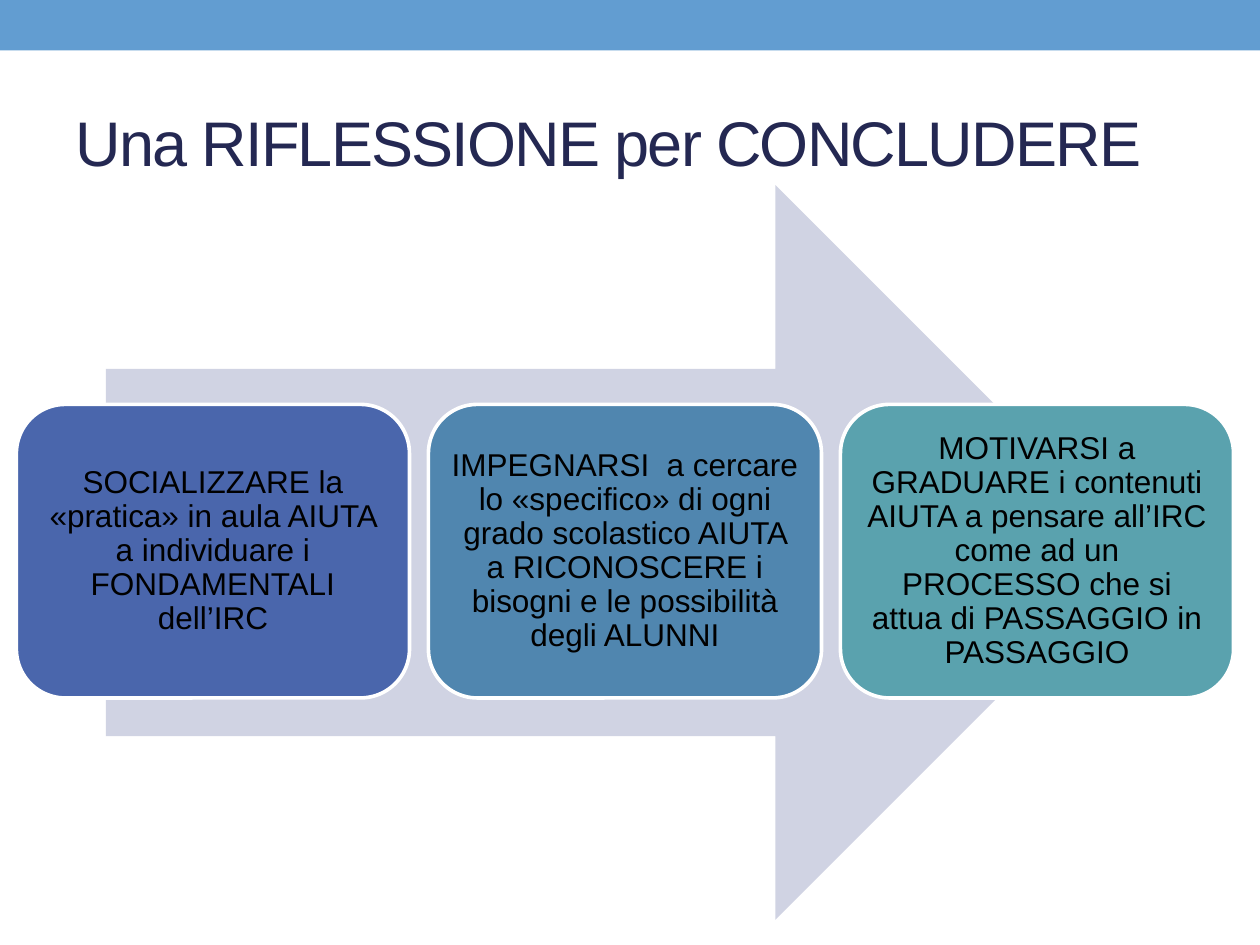
from pptx import Presentation
from pptx.dml.color import RGBColor
from pptx.enum.shapes import MSO_SHAPE
from pptx.enum.text import MSO_ANCHOR, PP_ALIGN
from pptx.util import Inches, Pt

RECTANGLE = MSO_SHAPE.RECTANGLE
RIGHT_ARROW = MSO_SHAPE.RIGHT_ARROW
ROUNDED = MSO_SHAPE.ROUNDED_RECTANGLE
MIDDLE = MSO_ANCHOR.MIDDLE
LEFT, CENTER = PP_ALIGN.LEFT, PP_ALIGN.CENTER

WHITE = RGBColor(0xFF, 0xFF, 0xFF)
BLACK = RGBColor(0x00, 0x00, 0x00)
NAVY = RGBColor(0x24, 0x28, 0x52)
SKY = RGBColor(0x62, 0x9D, 0xD1)
LAVENDER = RGBColor(0xD0, 0xD3, 0xE3)
BLUE = RGBColor(0x4A, 0x66, 0xAC)
STEEL = RGBColor(0x50, 0x86, 0xAF)
TEAL = RGBColor(0x5A, 0xA2, 0xAE)

TITLE = "Una RIFLESSIONE per CONCLUDERE"
STEPS = [
    (BLUE, "SOCIALIZZARE la «pratica» in aula AIUTA a individuare i "
           "FONDAMENTALI dell’IRC"),
    (STEEL, "IMPEGNARSI  a cercare lo «specifico» di ogni grado scolastico "
            "AIUTA a RICONOSCERE i bisogni e le possibilità degli ALUNNI"),
    (TEAL, "MOTIVARSI a GRADUARE i contenuti AIUTA a pensare all’IRC come "
           "ad un PROCESSO che si attua di PASSAGGIO in PASSAGGIO"),
]
STEP_LEFT, STEP_TOP, STEP_WIDTH, STEP_HEIGHT = 0.13, 3.21, 3.12, 2.33
STEP_PITCH = 3.27


def apply(target, values):
    for name, value in values.items():
        setattr(target, name, value)


class SlideBuilder:
    font_name = "Arial"
    title_size = Pt(36)
    step_size = Pt(18)
    step_margin = Inches(0.07)
    outline = Pt(2.08)

    def __init__(self, slide):
        self.slide = slide

    def add_text(self, frame, text, size, color, paragraph_format):
        apply(frame, {"word_wrap": True, "vertical_anchor": MIDDLE})
        para = frame.paragraphs[0]
        apply(para, paragraph_format)
        span = para.add_run()
        span.text = text
        apply(span.font, {"name": self.font_name, "size": size})
        span.font.color.rgb = color
        return span

    def title(self, text, left, top, width, height):
        box = self.slide.shapes.title
        apply(box, {"left": Inches(left), "top": Inches(top),
                    "width": Inches(width), "height": Inches(height)})
        span = self.add_text(box.text_frame, text, self.title_size, NAVY,
                             {"alignment": LEFT})
        # Letter spacing in hundredths of a point
        span._r.get_or_add_rPr().set("spc", "-100")

    def shape(self, kind, left, top, width, height, fill):
        box = self.slide.shapes.add_shape(
            kind, Inches(left), Inches(top), Inches(width), Inches(height))
        box.shadow.inherit = False
        box.fill.solid()
        box.fill.fore_color.rgb = fill
        box.line.fill.background()
        return box

    def step(self, left, fill, text):
        box = self.shape(ROUNDED, left, STEP_TOP, STEP_WIDTH, STEP_HEIGHT, fill)
        box.line.color.rgb = WHITE
        box.line.width = self.outline
        frame = box.text_frame
        sides = ("left", "top", "right", "bottom")
        apply(frame, {f"margin_{side}": self.step_margin for side in sides})
        self.add_text(frame, text, self.step_size, BLACK,
                      {"alignment": CENTER, "line_spacing": 0.9})


def main():
    deck = Presentation()
    deck.slide_width, deck.slide_height = Inches(10), Inches(7.5)
    page = SlideBuilder(deck.slides.add_slide(deck.slide_layouts[5]))

    # Top band and title
    page.shape(RECTANGLE, 0, 0, 10, 0.4, SKY)
    page.title(TITLE, 0.5, 0.58, 9, 1.08)

    # Arrow behind the three steps
    page.shape(RIGHT_ARROW, 0.84, 1.47, 8.23, 5.83, LAVENDER)
    for index, (fill, text) in enumerate(STEPS):
        page.step(STEP_LEFT + index * STEP_PITCH, fill, text)

    deck.save("out.pptx")


if __name__ == "__main__":
    main()
